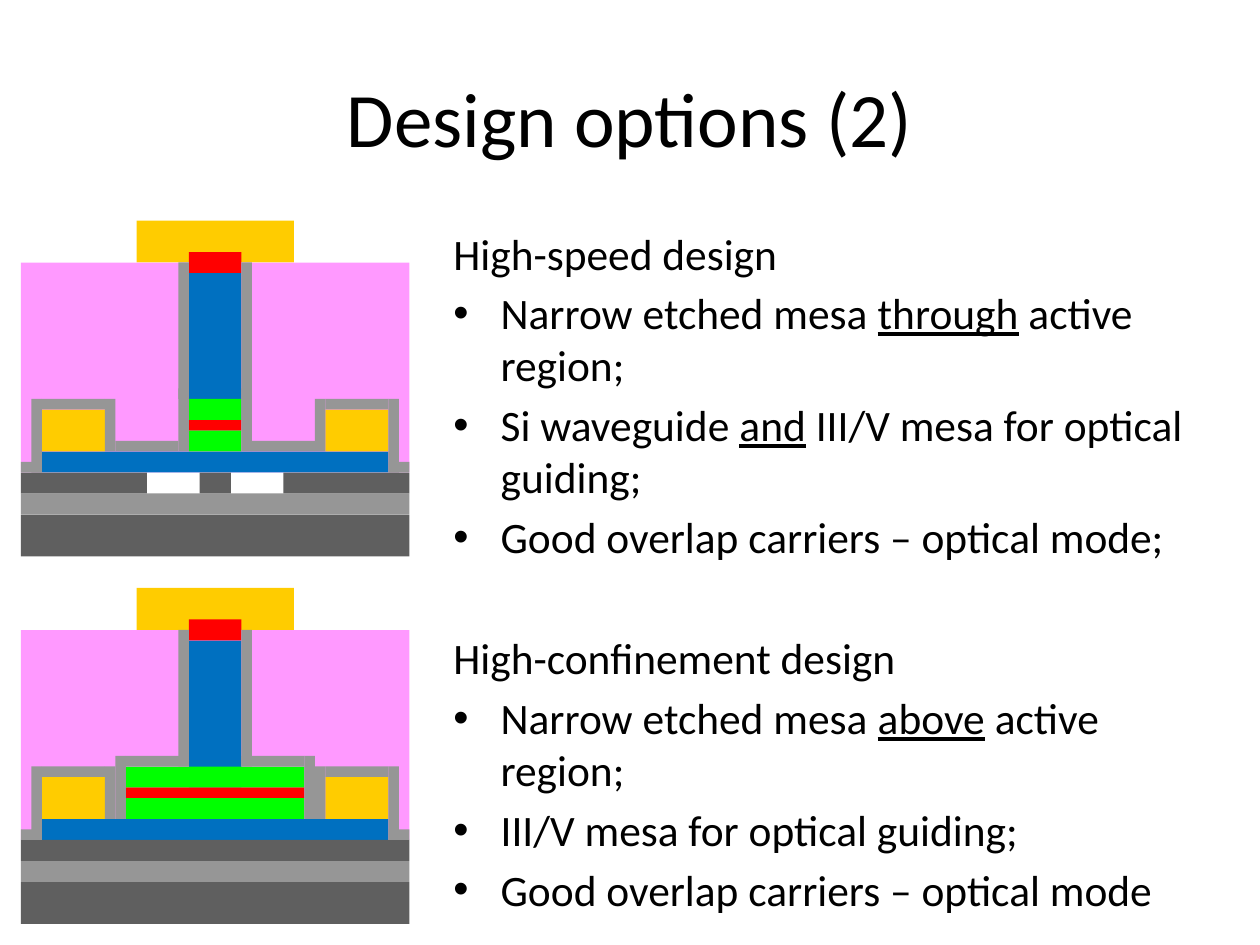
from dataclasses import dataclass

from lxml import etree
from pptx import Presentation
from pptx.dml.color import RGBColor
from pptx.enum.shapes import MSO_SHAPE
from pptx.enum.text import MSO_ANCHOR, PP_ALIGN
from pptx.oxml.ns import qn
from pptx.util import Pt

RECTANGLE = MSO_SHAPE.RECTANGLE
MIDDLE = MSO_ANCHOR.MIDDLE
TOP = MSO_ANCHOR.TOP
CENTER = PP_ALIGN.CENTER
LEFT = PP_ALIGN.LEFT

EMU_PER_PX = 9525
CELL = 8
MIRROR_SUM = 41
FONT = "Calibri"
BLACK = "000000"
GOLD = "FFCC00"
PINK = "FF99FF"
LIGHT_GREY = "969696"
DARK_GREY = "5F5F5F"
BLUE = "0070C0"
RED = "FF0000"
GREEN = "00FF00"


@dataclass(frozen=True)
class Layer:
    left: int
    top: int
    width: int
    height: int
    color: str

    def mirrored(self) -> "Layer":
        return Layer(MIRROR_SUM - self.left - self.width, self.top,
                     self.width, self.height, self.color)


@dataclass(frozen=True)
class Device:
    top: int
    centred: list[Layer]
    paired: list[Layer]


@dataclass(frozen=True)
class Line:
    runs: list[tuple[str, bool]]
    bullet: bool = True
    space_before: float = 4.4


def px(value: int) -> int:
    return value * EMU_PER_PX


def rgb(color: str) -> RGBColor:
    return RGBColor.from_string(color)


def centred(left: int, top: int, height: int, color: str) -> Layer:
    return Layer(left, top, MIRROR_SUM - 2 * left, height, color)


COMMON_CENTRED = [
    centred(13, 0, 4, GOLD),
    centred(2, 4, 20, PINK),
    centred(2, 26, 2, LIGHT_GREY),
    centred(2, 28, 4, DARK_GREY),
    centred(18, 5, 14, BLUE),
    centred(4, 22, 2, BLUE),
    centred(18, 3, 2, RED),
]
COMMON_PAIRED = [
    Layer(4, 18, 6, 4, GOLD),
    Layer(3, 17, 1, 7, LIGHT_GREY),
    Layer(10, 17, 1, 5, LIGHT_GREY),
    Layer(4, 17, 6, 1, LIGHT_GREY),
    Layer(2, 23, 2, 1, LIGHT_GREY),
    Layer(17, 4, 1, 13, LIGHT_GREY),
]


def active_region(left: int) -> list[Layer]:
    return [centred(left, 20, 2, GREEN), centred(left, 19, 1, RED),
            centred(left, 17, 2, GREEN)]


def active_wall(left: int) -> Layer:
    return Layer(left - 1, 16, 1, 6, LIGHT_GREY)


HIGH_SPEED = Device(
    21,
    COMMON_CENTRED + active_region(18) + [centred(19, 24, 2, DARK_GREY)],
    COMMON_PAIRED + [active_wall(18), Layer(11, 21, 6, 1, LIGHT_GREY),
                     Layer(2, 24, 12, 2, DARK_GREY)],
)
HIGH_CONFINEMENT = Device(
    56,
    COMMON_CENTRED + active_region(12) + [centred(2, 24, 2, DARK_GREY)],
    COMMON_PAIRED + [active_wall(12), Layer(12, 16, 6, 1, LIGHT_GREY)],
)

TITLE = [Line([("Design options (2)", False)], False, 0)]
BODY = [
    Line([("High-speed design", False)], False),
    Line([("Narrow etched mesa ", False), ("through", True),
          (" active region;", False)]),
    Line([("Si waveguide ", False), ("and", True),
          (" III/V mesa for optical guiding;", False)]),
    Line([("Good overlap carriers – optical mode;", False)]),
    Line([("High-confinement design", False)], False, 39.5),
    Line([("Narrow etched mesa ", False), ("above", True),
          (" active region;", False)]),
    Line([("III/V mesa for optical guiding;", False)]),
    Line([("Good overlap carriers – optical mode", False)]),
]


def draw_device(slide, device: Device) -> None:
    group = slide.shapes.add_group_shape()
    mirrored = [layer.mirrored() for layer in device.paired]
    for layer in device.centred + device.paired + mirrored:
        shape = group.shapes.add_shape(
            RECTANGLE, px(layer.left * CELL), px((device.top + layer.top) * CELL),
            px(layer.width * CELL), px(layer.height * CELL))
        shape.shadow.inherit = False
        shape.fill.solid()
        shape.fill.fore_color.rgb = rgb(layer.color)
        shape.line.fill.background()


def set_indent(paragraph, bullet: bool) -> None:
    properties = paragraph._p.get_or_add_pPr()
    properties.set("marL", str(px(36)))
    properties.set("indent", str(-px(36)))
    if bullet:
        font = etree.SubElement(properties, qn("a:buFont"))
        font.set("typeface", "Arial")
        etree.SubElement(properties, qn("a:buChar")).set("char", "•")
    else:
        etree.SubElement(properties, qn("a:buNone"))


def draw_text(slide, box: tuple[int, int, int, int], lines: list[Line],
              size: float, anchor, alignment) -> None:
    frame = slide.shapes.add_textbox(*map(px, box)).text_frame
    frame.word_wrap = True
    frame.vertical_anchor = anchor
    for index, line in enumerate(lines):
        paragraph = frame.add_paragraph() if index else frame.paragraphs[0]
        paragraph.alignment = alignment
        paragraph.space_before = Pt(line.space_before)
        if alignment == LEFT:
            set_indent(paragraph, line.bullet)
        for text, underlined in line.runs:
            run = paragraph.add_run()
            run.text = text
            run.font.name = FONT
            run.font.size = Pt(size)
            run.font.color.rgb = rgb(BLACK)
            if underlined:
                run.font.underline = True


def main() -> None:
    presentation = Presentation()
    presentation.slide_width = px(960)
    presentation.slide_height = px(720)
    slide = presentation.slides.add_slide(presentation.slide_layouts[6])
    draw_text(slide, (48, 29, 864, 120), TITLE, 44, MIDDLE, CENTER)
    for device in (HIGH_CONFINEMENT, HIGH_SPEED):
        draw_device(slide, device)
    draw_text(slide, (336, 168, 576, 475), BODY, 24.8, TOP, LEFT)
    presentation.save("out.pptx")


if __name__ == "__main__":
    main()
